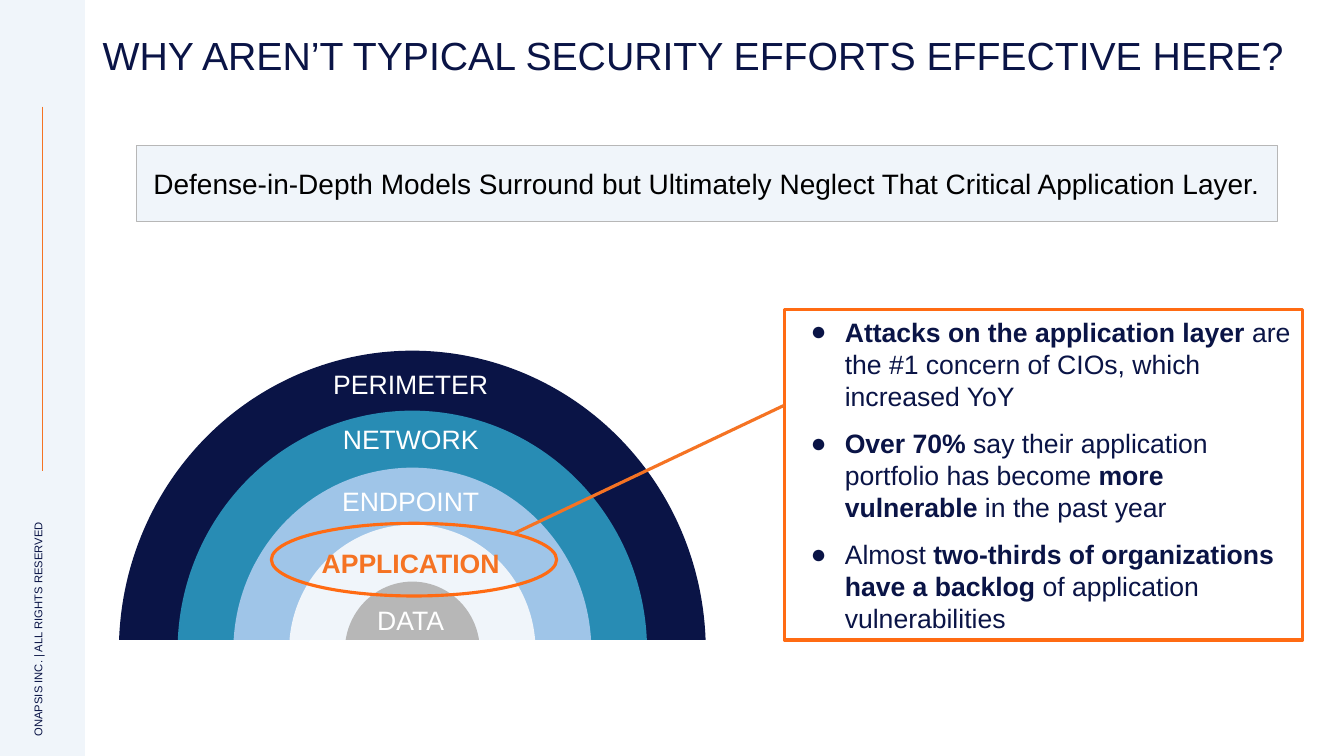
from dataclasses import dataclass

from lxml.etree import SubElement
from pptx import Presentation
from pptx.dml.color import RGBColor
from pptx.enum.shapes import MSO_CONNECTOR, MSO_SHAPE
from pptx.enum.text import MSO_ANCHOR, MSO_AUTO_SIZE, PP_ALIGN
from pptx.oxml.ns import qn
from pptx.util import Inches, Pt

# The slide is a grid of 32 columns by 18 rows; all lengths are in cells
ROWS = 18
CELL = Inches(7.5) / ROWS


@dataclass(frozen=True)
class Theme:
    font: str = "Arial"
    navy: str = "0A1446"
    teal: str = "288CB4"
    sky: str = "9FC5E8"
    pale: str = "F0F5FA"
    gray: str = "B7B7B7"
    white: str = "FFFFFF"
    black: str = "000000"
    orange: str = "F57323"
    bright_orange: str = "FF6B13"
    title_size: int = 28
    banner_size: int = 20
    body_size: int = 19
    copyright_size: int = 8
    thin: float = 0.75
    thick: float = 2.25


THEME = Theme()

LAYERS = [  # label, share of the arch width, fill, label colour, label row
    ("PERIMETER", 1, THEME.navy, THEME.white, 0.17),
    ("NETWORK", 0.8, THEME.teal, THEME.white, 1.49),
    ("ENDPOINT", 0.61, THEME.sky, THEME.white, 2.95),
    ("APPLICATION", 0.42, THEME.pale, THEME.orange, 4.42),
    ("DATA", 0.23, THEME.gray, THEME.white, 5.78),
]
FINDINGS = [  # runs of (text, bold)
    [("Attacks on the application layer", True),
     (" are the #1 concern of CIOs, which increased YoY", False)],
    [("Over 70% ", True), ("say their application portfolio has become ", False),
     ("more vulnerable", True), (" in the past year", False)],
    [("Almost ", False), ("two-thirds of organizations have a backlog", True),
     (" of application vulnerabilities", False)],
]


def cells(*lengths):
    return [round(length * CELL) for length in lengths]


def set_line(shape, color, width):
    shape.line.color.rgb = RGBColor.from_string(color)
    shape.line.width = Pt(width)


def add_preset(slide, preset, box, fill=None, line=None):
    shape = slide.shapes.add_shape(preset, *cells(*box))
    shape.shadow.inherit = False
    if fill:
        shape.fill.solid()
        shape.fill.fore_color.rgb = RGBColor.from_string(fill)
    else:
        shape.fill.background()
    if line:
        set_line(shape, *line)
    else:
        shape.line.fill.background()
    return shape


def add_line(slide, start, end, width):
    line = slide.shapes.add_connector(MSO_CONNECTOR.STRAIGHT, *cells(*start, *end))
    set_line(line, THEME.orange, width)
    SubElement(line._element.spPr, qn("a:effectLst"))


def format_frame(frame, inset=0.1, anchor=MSO_ANCHOR.TOP):
    settings = {"word_wrap": True, "auto_size": MSO_AUTO_SIZE.NONE, "vertical_anchor": anchor}
    settings |= {f"margin_{side}": Inches(inset) for side in ("left", "top", "right", "bottom")}
    for name, value in settings.items():
        setattr(frame, name, value)


def add_run(paragraph, text, size, color, bold=False):
    run = paragraph.add_run()
    run.text = text
    for name, value in {"name": THEME.font, "size": Pt(size), "bold": bold}.items():
        setattr(run.font, name, value)
    run.font.color.rgb = RGBColor.from_string(color)


def write_line(shape, text, size, color, bold=False, align=PP_ALIGN.CENTER, spacing=1.0):
    paragraph = shape.text_frame.paragraphs[0]
    paragraph.alignment = align
    paragraph.line_spacing = spacing
    paragraph.space_before = Pt(0)
    add_run(paragraph, text, size, color, bold)


def place(shape, box):
    for name, value in zip(("left", "top", "width", "height"), cells(*box)):
        setattr(shape, name, value)


def add_side_panel(slide, box):
    left, top, width, height = box
    middle = left + width / 2
    add_preset(slide, MSO_SHAPE.RECTANGLE, box, THEME.pale)
    add_line(slide, (middle, top + 2.54), (middle, top + 11.21), THEME.thin)

    # Copyright line, reading upwards
    length, depth = 9.12, 0.7
    label = slide.shapes.add_textbox(
        *cells(middle - length / 2, top + 13.21 - depth / 2, length, depth))
    label.rotation = 270
    format_frame(label.text_frame, 0.1)
    label.text_frame.margin_top = label.text_frame.margin_bottom = Inches(0.05)
    write_line(label, "ONAPSIS INC. | ALL RIGHTS RESERVED", THEME.copyright_size,
               THEME.navy, align=PP_ALIGN.LEFT, spacing=0.9)


def add_title(slide, box):
    title = slide.shapes.title
    place(title, box)
    format_frame(title.text_frame, 0)
    title.text_frame.margin_left = Inches(0.06)
    write_line(title, "WHY AREN’T TYPICAL SECURITY EFFORTS EFFECTIVE HERE?",
               THEME.title_size, THEME.navy, align=PP_ALIGN.LEFT, spacing=0.9)


def add_banner(slide, box):
    banner = add_preset(slide, MSO_SHAPE.RECTANGLE, box, THEME.pale, (THEME.gray, THEME.thin))
    format_frame(banner.text_frame, anchor=MSO_ANCHOR.MIDDLE)
    write_line(banner, "Defense-in-Depth Models Surround but Ultimately Neglect "
               "That Critical Application Layer.", THEME.banner_size, THEME.black)


def add_layer_arch(slide, box):
    left, top, width, height = box
    center_x, center_y = left + width / 2, top + 7.14

    # Concentric layers, outermost first
    for _, share, fill, _, _ in LAYERS:
        across, down = share * width, share * 14.28
        add_preset(slide, MSO_SHAPE.OVAL,
                   (center_x - across / 2, center_y - down / 2, across, down), fill)
    for text, _, _, color, row in LAYERS:
        label = slide.shapes.add_textbox(*cells(center_x - 2.98, top + row, 5.88, 1.25))
        format_frame(label.text_frame)
        write_line(label, text, THEME.body_size, color, bold=text == "APPLICATION")

    # Flat base of the arch, then the ring around the application layer
    add_preset(slide, MSO_SHAPE.RECTANGLE,
               (left - 0.15, top + height, width + 0.3, 7.39), THEME.white)
    add_preset(slide, MSO_SHAPE.OVAL, (left + 3.63, top + 4.11, 6.79, 1.73),
               line=(THEME.bright_orange, THEME.thick))


def add_findings(slide, box):
    body = slide.placeholders[1]
    place(body, box)
    set_line(body, THEME.bright_orange, THEME.thick)
    format_frame(body.text_frame, anchor=MSO_ANCHOR.MIDDLE)
    for index, runs in enumerate(FINDINGS):
        frame = body.text_frame
        paragraph = frame.add_paragraph() if index else frame.paragraphs[0]
        properties = paragraph._p.get_or_add_pPr()
        properties.set("marL", str(Inches(0.5)))
        properties.set("indent", str(Inches(-0.34)))
        color = SubElement(properties, qn("a:buClr"))
        SubElement(color, qn("a:srgbClr"), val=THEME.navy)
        SubElement(properties, qn("a:buFont"), typeface=THEME.font)
        SubElement(properties, qn("a:buChar"), char="●")
        paragraph.space_before = Pt(11 if index else 0)
        for text, bold in runs:
            add_run(paragraph, text, THEME.body_size, THEME.navy, bold)


def main():
    presentation = Presentation()
    presentation.slide_width, presentation.slide_height = Inches(13.33), Inches(7.5)
    slide = presentation.slides.add_slide(presentation.slide_layouts[1])
    add_side_panel(slide, (0, 0, 2.02, ROWS))
    add_title(slide, (2.3, 0.86, 29.4, 1.66))
    add_banner(slide, (3.24, 3.46, 27.17, 1.82))
    add_layer_arch(slide, (2.83, 8.35, 13.97, 6.89))
    add_findings(slide, (18.67, 7.37, 12.34, 7.87))
    # Link from the application ring to the findings
    add_line(slide, (12.24, 12.7), (18.67, 9.65), THEME.thick)
    presentation.save("out.pptx")


if __name__ == "__main__":
    main()
